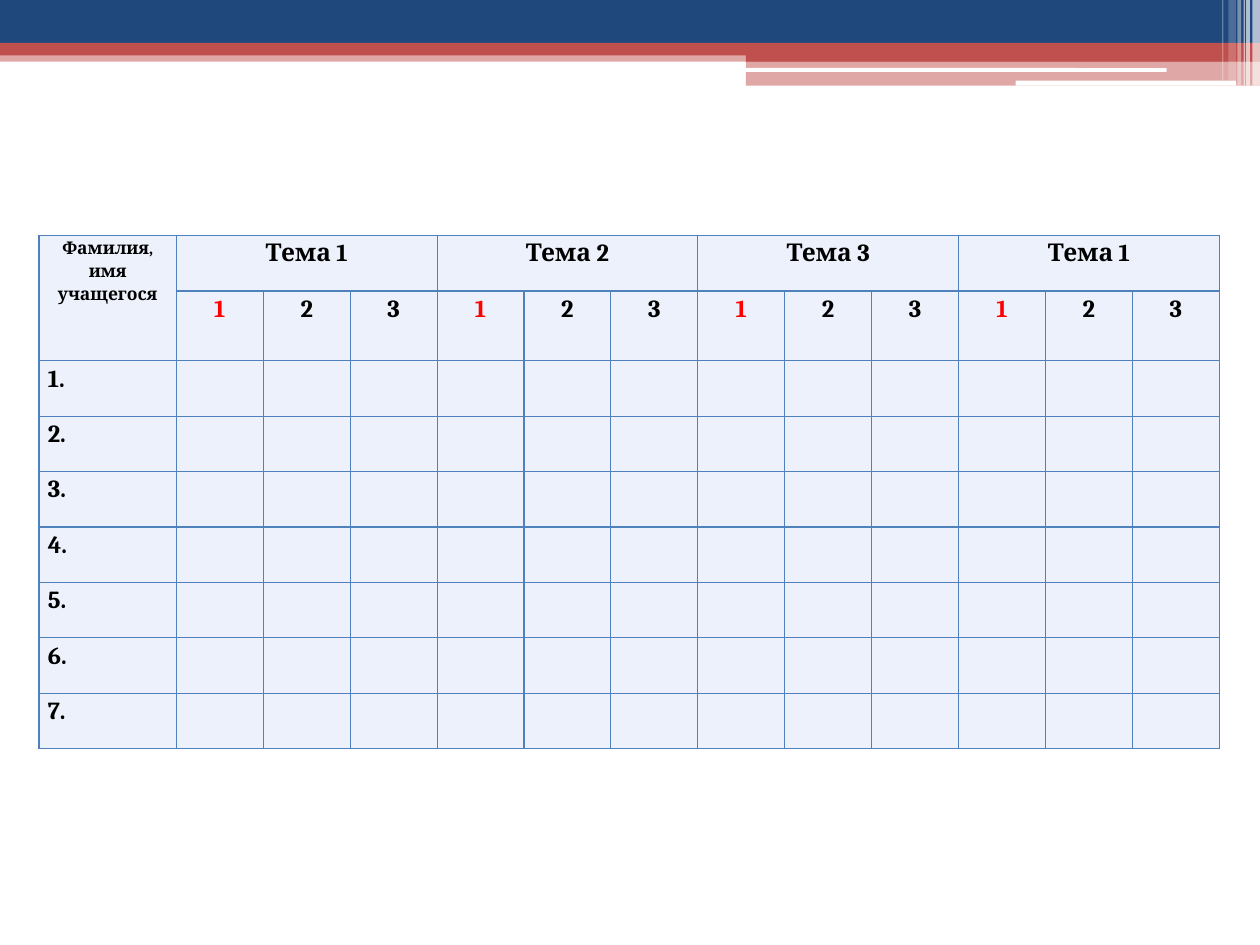
"""Build a slide with a student progress table under a layered header band."""
import pptx
import pptx.dml.color
import pptx.enum.shapes
import pptx.enum.text
import pptx.oxml
import pptx.oxml.ns
import pptx.util

COLORS = {
    "navy": "1F497D", "red": "C0504D", "white": "FFFFFF", "cell": "EDF1FC",
    "border": "4F81BD", "text": "000000", "accent": "FF0000",
}
FONT = "Cambria"
SLIDE_W, SLIDE_H = 10, 7.5

# left, top, width, height as percent of the slide width; colour; opacity
BANDS = [
    ("RECTANGLE", (0, 4, 100, 0.9), "red", 50),
    ("RECTANGLE", (0, 0, 100, 3.4), "navy", 100),
    ("RECTANGLE", (0, 3.4, 100, 1), "red", 100),
    ("RECTANGLE", (59.2, 3.9, 40.8, 1), "red", 100),
    ("RECTANGLE", (59.2, 4.8, 40.8, 2), "red", 50),
    ("ROUNDED_RECTANGLE", (59.1, 5.4, 33.5, 0.3), "white", 100),
    ("ROUNDED_RECTANGLE", (80.6, 6.4, 17.5, 0.4), "white", 100),
    ("RECTANGLE", (99.4, 0, 0.6, 6.8), "white", 65),
    ("RECTANGLE", (98.9, 0, 0.3, 6.8), "white", 65),
    ("RECTANGLE", (98.7, 0, 0.1, 6.8), "white", 60),
    ("RECTANGLE", (98.2, 0, 0.3, 6.8), "white", 40),
    ("RECTANGLE", (97.5, 0, 0.6, 6.4), "white", 20),
    ("RECTANGLE", (97, 0, 0.1, 6.4), "white", 30),
]
NAME_HEADING = "Фамилия, имя учащегося"
TOPICS = ["Тема 1", "Тема 2", "Тема 3", "Тема 1"]
MARKS = ["1", "2", "3"]
STUDENTS = ["1.", "2.", "3.", "4.", "5.", "6.", "7."]
TABLE_LEFT, TABLE_TOP = 0.31, 1.87
COL_WIDTHS = [1.09] + [0.69] * len(TOPICS) * len(MARKS)
ROW_HEIGHTS = [0.44, 0.55] + [0.44] * len(STUDENTS)


def rgb(name):
    return pptx.dml.color.RGBColor.from_string(COLORS[name])


def add_band(s, kind, box, color, opacity):
    left, top, width, height = (pptx.util.Inches(v * SLIDE_W / 100) for v in box)
    sp = s.shapes.add_shape(pptx.enum.shapes.MSO_SHAPE[kind], left, top, width, height)
    sp.shadow.inherit = False
    sp.line.fill.background()
    sp.fill.solid()
    sp.fill.fore_color.rgb = rgb(color)
    if opacity < 100:
        clr = sp.fill._xPr.find(".//" + pptx.oxml.ns.qn("a:srgbClr"))
        alpha = clr.makeelement(pptx.oxml.ns.qn("a:alpha"), {"val": str(opacity * 1000)})
        clr.append(alpha)


def style_cell(cell):
    tcPr = cell._tc.get_or_add_tcPr()
    for side in "LRTB":
        tcPr.append(pptx.oxml.parse_xml(
            f'<a:ln{side} {pptx.oxml.ns.nsdecls("a")} w="{pptx.util.Pt(0.75)}"><a:solidFill>'
            f'<a:srgbClr val="{COLORS["border"]}"/></a:solidFill></a:ln{side}>'))
    cell.fill.solid()
    cell.fill.fore_color.rgb = rgb("cell")
    cell.margin_left = cell.margin_right = pptx.util.Inches(0.07)
    cell.margin_top = cell.margin_bottom = 0


def write(cell, text, size=14, color="text", align="CENTER"):
    p = cell.text_frame.paragraphs[0]
    p.alignment = pptx.enum.text.PP_ALIGN[align]
    p.line_spacing = 1.15
    r = p.add_run()
    r.text = text
    r.font.name = FONT
    r.font.size = pptx.util.Pt(size)
    r.font.bold = True
    r.font.color.rgb = rgb(color)


def add_progress_table(s):
    box = (TABLE_LEFT, TABLE_TOP, sum(COL_WIDTHS), sum(ROW_HEIGHTS))
    table = s.shapes.add_table(len(ROW_HEIGHTS), len(COL_WIDTHS),
                               *map(pptx.util.Inches, box)).table
    table.first_row = table.horz_banding = False
    for col, width in zip(table.columns, COL_WIDTHS):
        col.width = pptx.util.Inches(width)
    for row, height in zip(table.rows, ROW_HEIGHTS):
        row.height = pptx.util.Inches(height)
    for cell in table.iter_cells():
        style_cell(cell)

    table.cell(0, 0).merge(table.cell(1, 0))
    write(table.cell(0, 0), NAME_HEADING, size=10)
    for t, topic in enumerate(TOPICS):
        first = 1 + t * len(MARKS)
        table.cell(0, first).merge(table.cell(0, first + len(MARKS) - 1))
        write(table.cell(0, first), topic)
        for m, mark in enumerate(MARKS):
            write(table.cell(1, first + m), mark, color="text" if m else "accent")
    for i, student in enumerate(STUDENTS, start=2):
        write(table.cell(i, 0), student, align="LEFT")


def main():
    prs = pptx.Presentation()
    prs.slide_width = pptx.util.Inches(SLIDE_W)
    prs.slide_height = pptx.util.Inches(SLIDE_H)
    s = prs.slides.add_slide(prs.slide_layouts[6])
    for band in BANDS:
        add_band(s, *band)
    add_progress_table(s)
    prs.save("out.pptx")


if __name__ == "__main__":
    main()
